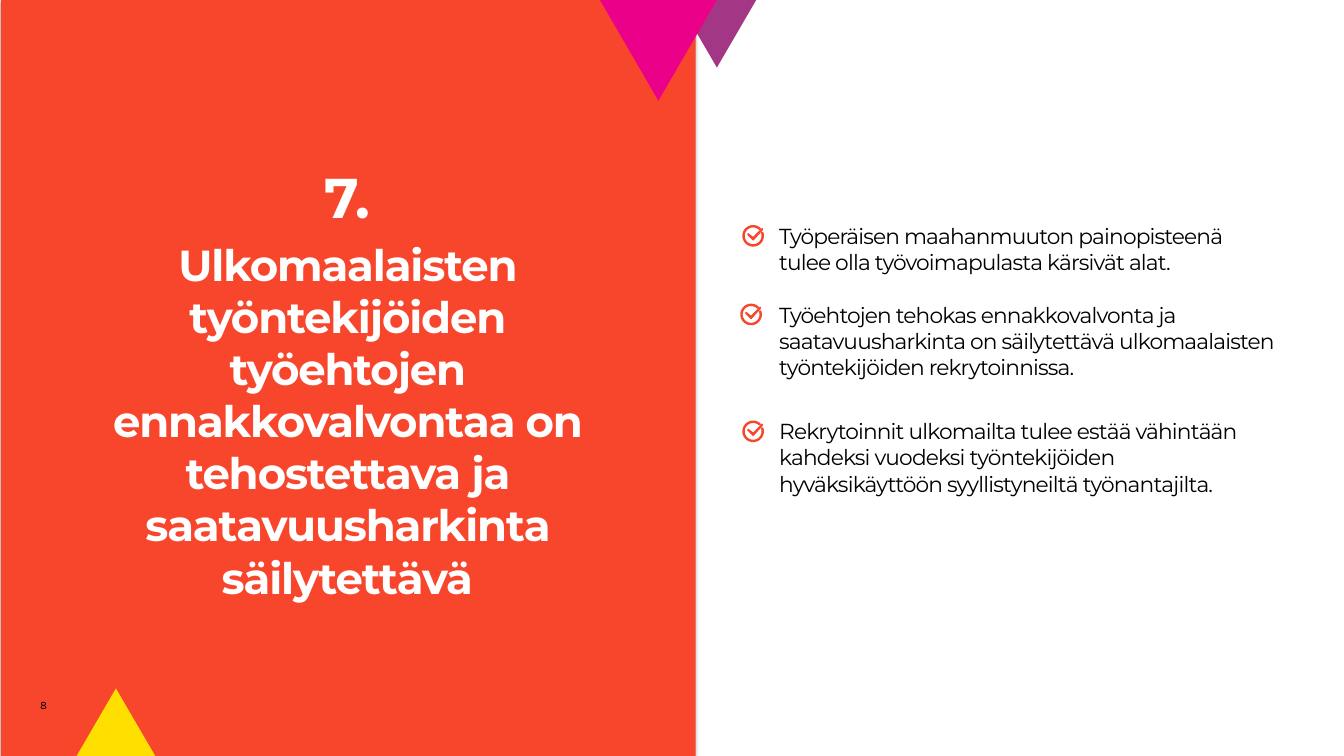
from dataclasses import dataclass
from math import cos, radians, sin

from lxml.etree import SubElement
from pptx import Presentation
from pptx.dml.color import RGBColor as RGB
from pptx.enum.shapes import MSO_SHAPE as SHAPE
from pptx.enum.text import PP_ALIGN as ALIGN
from pptx.oxml.ns import qn
from pptx.util import Inches, Pt


@dataclass(frozen=True)
class Theme:
    red: RGB = RGB(0xF8, 0x46, 0x2C)
    yellow: RGB = RGB(0xFF, 0xDF, 0x00)
    purple: RGB = RGB(0xA3, 0x37, 0x86)
    magenta: RGB = RGB(0xEB, 0x00, 0x89)
    white: RGB = RGB(0xFF, 0xFF, 0xFF)
    black: RGB = RGB(0, 0, 0)
    font: str = "Montserrat"
    number_font: str = "Karla"
    heading_number: float = 40
    heading: float = 31
    body: float = 15.5
    page: float = 8


class Deck:
    """Draws styled elements on the current slide."""

    def __init__(self, theme):
        self.theme = theme
        self.prs = Presentation()
        self.prs.slide_width, self.prs.slide_height = Inches(13.33), Inches(7.5)
        self.s = None

    def add_slide(self):
        self.s = self.prs.slides.add_slide(self.prs.slide_layouts[6])

    def shape(self, kind, x, y, w, h, color, rotation=0):
        sp = self.s.shapes.add_shape(kind, Inches(x), Inches(y), Inches(w), Inches(h))
        sp.shadow.inherit = False
        sp.fill.solid()
        sp.fill.fore_color.rgb = color
        sp.line.fill.background()
        sp.rotation = rotation
        return sp

    def drop_shadow(self, sp):
        effects = sp._element.spPr.find(qn("a:effectLst"))
        shadow = SubElement(effects, qn("a:outerShdw"), blurRad=str(Pt(3.1)),
                            dist=str(Pt(1.8)), dir="5400000", rotWithShape="0")
        color = SubElement(shadow, qn("a:srgbClr"), val="000000")
        SubElement(color, qn("a:alpha"), val="35000")

    def text(self, x, y, w, h, paragraphs, color, font=None, bold=False,
             align=ALIGN.LEFT, before=0, spacing=0):
        sp = self.s.shapes.add_textbox(Inches(x), Inches(y), Inches(w), Inches(h))
        tf = sp.text_frame
        tf.word_wrap = True
        for i, (words, size) in enumerate(paragraphs):
            p = tf.add_paragraph() if i else tf.paragraphs[0]
            p.alignment = align
            if i:
                p.space_before = Pt(before)
            r = p.add_run()
            r.text = words
            r.font.name = font or self.theme.font
            r.font.size = Pt(size)
            r.font.bold = bold
            r.font.color.rgb = color
            if spacing:
                r._r.get_or_add_rPr().set("spc", str(round(spacing * 100)))

    def check_icon(self, x, y):
        def arc(radius, angles):
            return [(0.1 + radius * cos(radians(a)), 0.1 + radius * sin(radians(a)))
                    for a in angles]

        ring = arc(0.1, range(-20, 316, 5)) + arc(0.09, range(315, -21, -5))
        tick = [(0.05, 0.08), (0.1, 0.12), (0.19, 0.03), (0.19, 0.04),
                (0.1, 0.14), (0.05, 0.09)]
        ring, tick = ([(Inches(x + dx), Inches(y + dy)) for dx, dy in outline]
                      for outline in (ring, tick))
        fb = self.s.shapes.build_freeform(*ring[0])
        fb.add_line_segments(ring[1:])
        fb.move_to(*tick[0])
        fb.add_line_segments(tick[1:])
        sp = fb.convert_to_shape()
        sp.shadow.inherit = False
        sp.fill.solid()
        sp.fill.fore_color.rgb = sp.line.color.rgb = self.theme.red
        sp.line.width = Pt(1)

    def save(self):
        self.prs.save("out.pptx")


def main():
    t = Theme()
    deck = Deck(t)
    deck.add_slide()

    panel = deck.shape(SHAPE.RECTANGLE, 0.01, 0, 6.89, 7.5, t.red)
    deck.drop_shadow(panel)
    for x, y, w, h, color, rotation in (
        (0.76, 6.83, 0.78, 0.67, t.yellow, 0),
        (6.72, 0, 0.78, 0.67, t.purple, 180),
        (5.95, 0, 1.16, 1, t.magenta, 180),
    ):
        deck.shape(SHAPE.ISOSCELES_TRIANGLE, x, y, w, h, color, rotation)

    heading = [
        ("7.", t.heading_number),
        ("Ulkomaalaisten työntekijöiden työehtojen ennakkovalvontaa on "
         "tehostettava ja saatavuusharkinta säilytettävä", t.heading),
    ]
    deck.text(0.81, 1.56, 5.27, 4.63, heading, t.white, bold=True,
              align=ALIGN.CENTER, before=6.2, spacing=-0.8)
    deck.text(0.3, 6.88, 0.44, 0.37, [("8", t.page)], t.black, font=t.number_font)

    points = (
        (2.16, 5.03, 0.57, 7.37,
         "Työperäisen maahanmuuton painopisteenä tulee olla "
         "työvoimapulasta kärsivät alat."),
        (2.94, 5.12, 0.82, 7.35,
         "Työehtojen tehokas ennakkovalvonta ja saatavuusharkinta on "
         "säilytettävä ulkomaalaisten työntekijöiden rekrytoinnissa."),
        (4.1, 4.82, 0.82, 7.37,
         "Rekrytoinnit ulkomailta tulee estää vähintään kahdeksi vuodeksi "
         "työntekijöiden hyväksikäyttöön syyllistyneiltä työnantajilta."),
    )
    for y, w, h, icon_x, words in points:
        deck.text(7.63, y, w, h, [(words, t.body)], t.black, spacing=-0.6)
        deck.check_icon(icon_x, y + 0.08)

    deck.save()


if __name__ == "__main__":
    main()
